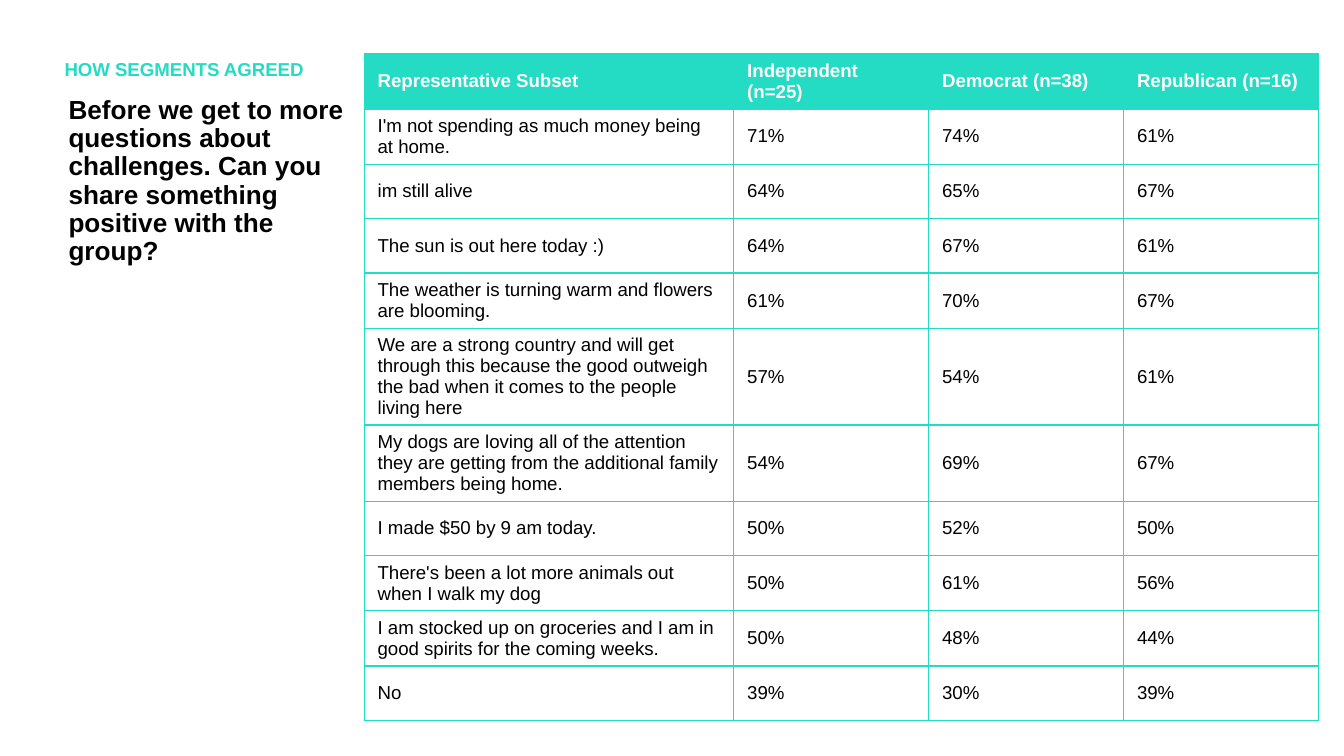
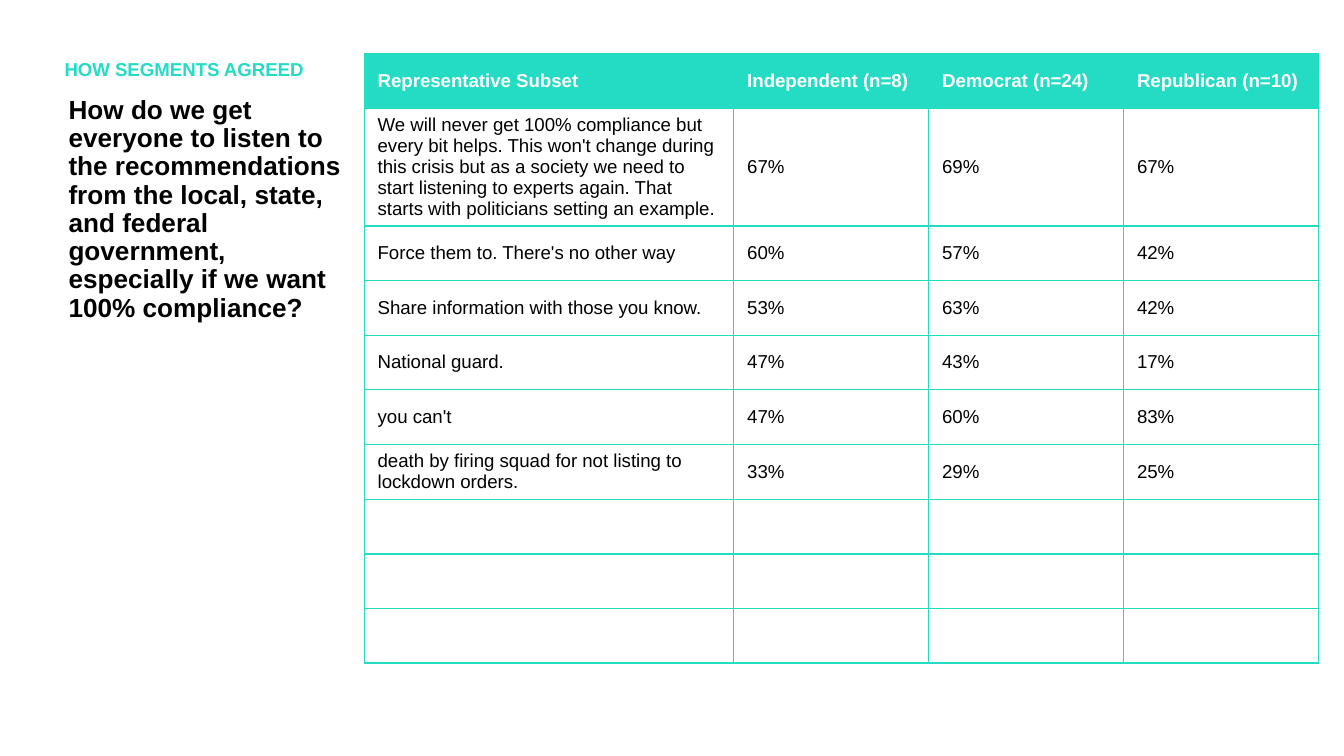
from dataclasses import dataclass

from lxml.etree import SubElement
from pptx import Presentation
from pptx.dml.color import RGBColor
from pptx.enum.text import MSO_ANCHOR, MSO_AUTO_SIZE, PP_ALIGN
from pptx.oxml.ns import qn
from pptx.presentation import Presentation as Deck
from pptx.shapes.placeholder import SlidePlaceholder
from pptx.slide import Slide
from pptx.table import _Cell as Cell
from pptx.text.text import _Paragraph as Paragraph
from pptx.util import Inches, Length, Pt


@dataclass(frozen=True)
class Theme:
    font: str = "Arial"
    accent: RGBColor = RGBColor(0x24, 0xDB, 0xC3)
    ink: RGBColor = RGBColor(0, 0, 0)
    paper: RGBColor = RGBColor(0xFF, 0xFF, 0xFF)
    question_size: Length = Pt(14)
    small_size: Length = Pt(10)
    border_width: Length = Pt(0.75)


@dataclass(frozen=True)
class Frame:
    left: Length
    top: Length
    width: Length
    height: Length


@dataclass(frozen=True)
class Response:
    statement: str = ""
    independent: str = ""
    democrat: str = ""
    republican: str = ""

    def values(self) -> tuple[str, str, str, str]:
        return self.statement, self.independent, self.democrat, self.republican


@dataclass(frozen=True)
class Report:
    question: str
    header: Response
    responses: list[Response]
    table_height: Length


THEME = Theme()
SLIDE_WIDTH = Inches(10)
SLIDE_HEIGHT = SLIDE_WIDTH * 9 // 16
SECTION_HEADER_LAYOUT = 2
SECTION_LABEL = "HOW SEGMENTS AGREED"
QUESTION_FRAME = Frame(Inches(0.41), Inches(0.67), Inches(2.3), Inches(4.41))
LABEL_FRAME = Frame(Inches(0.38), Inches(0.4), Inches(2.32), Inches(0.28))
TABLE_LEFT, TABLE_TOP = Inches(2.71), Inches(0.4)
COLUMN_WIDTHS = [Inches(2.75)] + [Inches(1.45)] * 3

REPORTS = [
    Report(
        "Before we get to more questions about challenges. "
        "Can you share something positive with the group?",
        Response("Representative Subset", "Independent (n=25)",
                 "Democrat (n=38)", "Republican (n=16)"),
        [
            Response("I'm not spending as much money being at home.", "71%", "74%", "61%"),
            Response("im still alive", "64%", "65%", "67%"),
            Response("The sun is out here today :)", "64%", "67%", "61%"),
            Response("The weather is turning warm and flowers are blooming.",
                     "61%", "70%", "67%"),
            Response("We are a strong country and will get through this because the good "
                     "outweigh the bad when it comes to the people living here",
                     "57%", "54%", "61%"),
            Response("My dogs are loving all of the attention they are getting from the "
                     "additional family members being home.", "54%", "69%", "67%"),
            Response("I made $50 by 9 am today.", "50%", "52%", "50%"),
            Response("There's been a lot more animals out when I walk my dog",
                     "50%", "61%", "56%"),
            Response("I am stocked up on groceries and I am in good spirits for the "
                     "coming weeks.", "50%", "48%", "44%"),
            Response("No", "39%", "30%", "39%"),
        ],
        Inches(4.46),
    ),
    Report(
        "How do we get everyone to listen to the recommendations from the local, state, "
        "and federal government, especially if we want 100% compliance?",
        Response("Representative Subset", "Independent (n=8)",
                 "Democrat (n=24)", "Republican (n=10)"),
        [
            Response("We will never get 100% compliance but every bit helps. This won't "
                     "change during this crisis but as a society we need to start listening "
                     "to experts again. That starts with politicians setting an example.",
                     "67%", "69%", "67%"),
            Response("Force them to. There's no other way", "60%", "57%", "42%"),
            Response("Share information with those you know.", "53%", "63%", "42%"),
            Response("National guard.", "47%", "43%", "17%"),
            Response("you can't", "47%", "60%", "83%"),
            Response("death by firing squad for not listing to lockdown orders.",
                     "33%", "29%", "25%"),
        ] + [Response()] * 3,
        Inches(4.06),
    ),
]


def format_runs(para: Paragraph, size: Length, color: RGBColor, bold: bool) -> None:
    for span in para.runs:
        span.font.name = THEME.font
        span.font.size = size
        span.font.bold = bold
        span.font.color.rgb = color


def fill_placeholder(box: SlidePlaceholder, frame: Frame, text: str,
                     size: Length, color: RGBColor) -> None:
    box.left, box.top = frame.left, frame.top
    box.width, box.height = frame.width, frame.height
    text_frame = box.text_frame
    text_frame.text = text
    text_frame.word_wrap = True
    text_frame.auto_size = MSO_AUTO_SIZE.NONE
    text_frame.vertical_anchor = MSO_ANCHOR.TOP
    para = text_frame.paragraphs[0]
    para.alignment = PP_ALIGN.LEFT
    para.line_spacing = 0.9
    para.space_before = Pt(10)
    format_runs(para, size, color, True)
    for span in para.runs:
        span.font._element.set("cap", "none")


def add_borders(cell: Cell) -> None:
    properties = cell._tc.get_or_add_tcPr()
    for side in ("a:lnL", "a:lnR", "a:lnT", "a:lnB"):
        line = SubElement(properties, qn(side), w=str(int(THEME.border_width)))
        paint = SubElement(line, qn("a:solidFill"))
        SubElement(paint, qn("a:srgbClr"), val=str(THEME.accent))


def fill_cell(cell: Cell, text: str, is_header: bool) -> None:
    add_borders(cell)
    cell.fill.solid()
    cell.fill.fore_color.rgb = THEME.accent if is_header else THEME.paper
    cell.vertical_anchor = MSO_ANCHOR.MIDDLE
    cell.text_frame.text = text
    color = THEME.paper if is_header else THEME.ink
    format_runs(cell.text_frame.paragraphs[0], THEME.small_size, color, is_header)


def add_response_table(page: Slide, report: Report) -> None:
    rows = [report.header, *report.responses]
    table = page.shapes.add_table(len(rows), len(COLUMN_WIDTHS), TABLE_LEFT, TABLE_TOP,
                                  sum(COLUMN_WIDTHS), report.table_height).table
    table.horz_banding = False
    for column, width in zip(table.columns, COLUMN_WIDTHS):
        column.width = width
    for row_index, response in enumerate(rows):
        for column_index, text in enumerate(response.values()):
            fill_cell(table.cell(row_index, column_index), text, row_index == 0)


def add_report_page(deck: Deck, report: Report) -> None:
    page = deck.slides.add_slide(deck.slide_layouts[SECTION_HEADER_LAYOUT])
    fill_placeholder(page.shapes.title, QUESTION_FRAME, report.question,
                     THEME.question_size, THEME.ink)
    fill_placeholder(page.placeholders[1], LABEL_FRAME, SECTION_LABEL,
                     THEME.small_size, THEME.accent)
    add_response_table(page, report)


def main() -> None:
    deck = Presentation()
    deck.slide_width, deck.slide_height = SLIDE_WIDTH, SLIDE_HEIGHT
    for report in REPORTS:
        add_report_page(deck, report)
    deck.save("out.pptx")


if __name__ == "__main__":
    main()
